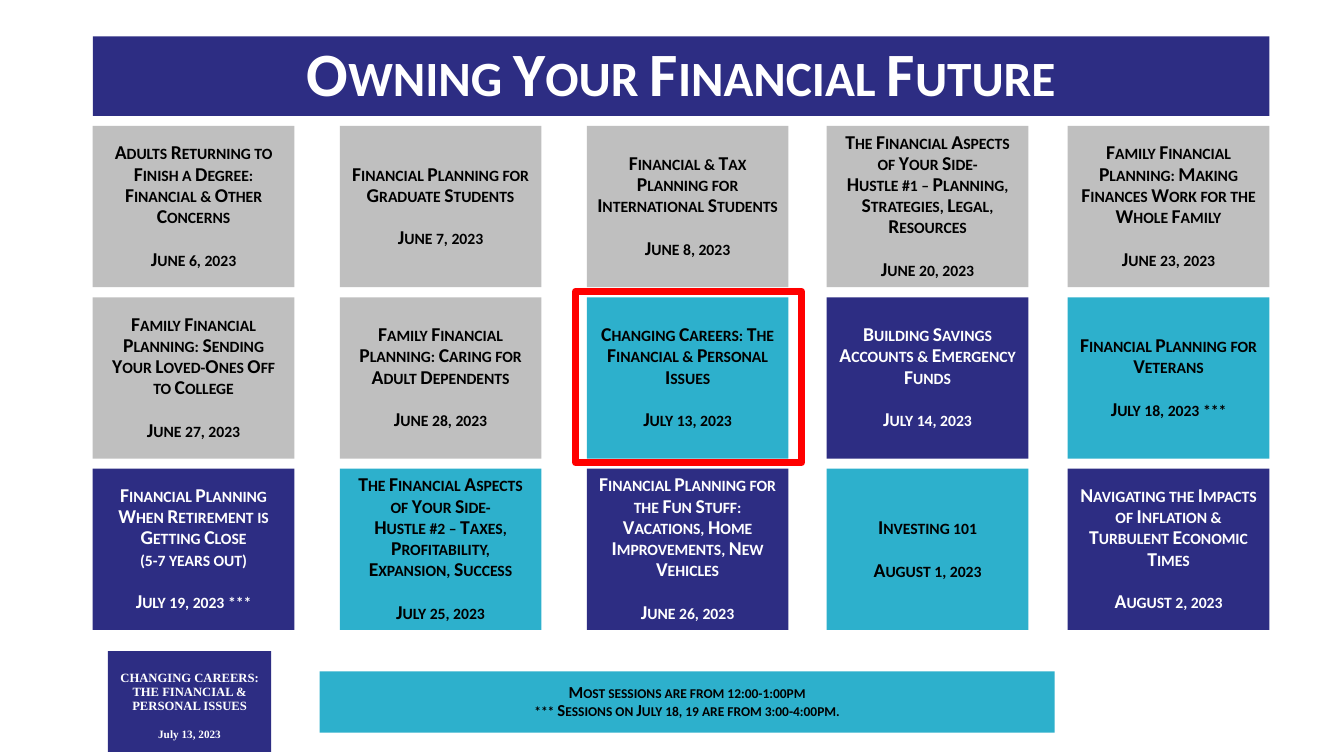
from pptx import Presentation
from pptx.dml.color import RGBColor
from pptx.enum import shapes, text
from pptx.util import Inches, Pt

NAVY = RGBColor(0x2D, 0x2D, 0x83)
TEAL = RGBColor(0x2D, 0xB0, 0xCC)
GRAY = RGBColor(0xBF, 0xBF, 0xBF)
RED = RGBColor(0xFF, 0x00, 0x00)
WHITE = RGBColor(0xFF, 0xFF, 0xFF)
BLACK = RGBColor(0x00, 0x00, 0x00)

COLUMN_LEFTS = [0.92, 3.37, 5.82, 8.2, 10.59]
FIRST_TOP, ROW_PITCH = 1.25, 1.7
CARD_WIDTH, CARD_HEIGHT = 2, 1.6

SESSIONS = [
    [
        ("Adults Returning to Finish a Degree: Financial & Other Concerns", "June 6, 2023", GRAY),
        ("Financial Planning for Graduate Students", "June 7, 2023", GRAY),
        ("Financial & Tax Planning for International Students", "June 8, 2023", GRAY),
        ("The Financial Aspects of Your Side-\vHustle #1 – Planning, Strategies, Legal, Resources",
         "June 20, 2023", GRAY),
        ("Family Financial Planning: Making Finances Work for the Whole Family",
         "June 23, 2023", GRAY),
    ],
    [
        ("Family Financial Planning: Sending Your Loved-Ones Off to College",
         "June 27, 2023", GRAY),
        ("Family Financial Planning: Caring for Adult Dependents", "June 28, 2023", GRAY),
        ("Changing Careers: The Financial & Personal Issues", "July 13, 2023", TEAL),
        ("Building Savings Accounts & Emergency Funds", "July 14, 2023", NAVY),
        ("Financial Planning for Veterans", "July 18, 2023 ***", TEAL),
    ],
    [
        ("Financial Planning When Retirement is Getting Close\v(5-7 years out)",
         "July 19, 2023 ***", NAVY),
        ("The Financial Aspects of Your Side-\vHustle #2 – Taxes, Profitability, Expansion, Success",
         "July 25, 2023", TEAL),
        ("Financial Planning for the Fun Stuff: Vacations, Home Improvements, New Vehicles",
         "June 26, 2023", NAVY),
        ("Investing 101", "August 1, 2023", TEAL),
        ("Navigating the Impacts of Inflation & Turbulent Economic Times",
         "August 2, 2023", NAVY),
    ],
]


def add_box(page, left, top, width, height, fill):
    box = page.shapes.add_shape(shapes.MSO_SHAPE.RECTANGLE, Inches(left), Inches(top),
                                Inches(width), Inches(height))
    box.shadow.inherit = False
    box.line.fill.background()
    paint(box, fill)
    return box


def paint(box, fill):
    box.fill.solid()
    box.fill.fore_color.rgb = fill
    box.text_frame.word_wrap = True
    box.text_frame.vertical_anchor = text.MSO_ANCHOR.MIDDLE


def style(para, size, color, name="Calibri", small_caps=True):
    para.alignment = text.PP_ALIGN.CENTER
    para.line_spacing = 0.9
    font = para.font
    font.name = name
    font.size = Pt(size)
    font.bold = True
    font.color.rgb = color
    if small_caps:
        font._element.set("cap", "small")


def write_pair(box, heading, date, sizes, gap, color, **look):
    frame = box.text_frame
    first, second = frame.paragraphs[0], frame.add_paragraph()
    first.text, second.text = heading, date
    second.space_before = Pt(gap)
    for para, size in zip((first, second), sizes):
        style(para, size, color, **look)


def add_title(page):
    title = page.shapes.title
    title.left, title.top = Inches(0.92), Inches(0.36)
    title.width, title.height = Inches(11.67), Inches(0.79)
    paint(title, NAVY)
    title.text_frame.auto_size = text.MSO_AUTO_SIZE.NONE
    title.text_frame.text = "Owning Your Financial Future"
    style(title.text_frame.paragraphs[0], 44, WHITE)


def add_sessions(page):
    for row, sessions in enumerate(SESSIONS):
        top = FIRST_TOP + row * ROW_PITCH
        for left, (topic, date, fill) in zip(COLUMN_LEFTS, sessions):
            card = add_box(page, left, top, CARD_WIDTH, CARD_HEIGHT, fill)
            color = WHITE if fill == NAVY else BLACK
            write_pair(card, topic, date, (14, 14), 15.4, color)


def add_current_session(page):
    box = add_box(page, 1.07, 6.46, 1.62, 1, NAVY)
    box.text_frame.margin_top = Inches(0.15)
    write_pair(box, "CHANGING CAREERS:\vTHE FINANCIAL & PERSONAL ISSUES", "July 13, 2023",
               (9, 8), 11.5, WHITE, name="Times New Roman", small_caps=False)


def add_time_note(page):
    box = add_box(page, 3.17, 6.66, 7.29, 0.61, TEAL)
    write_pair(box, "Most sessions are from 12:00-1:00pm",
               "*** Sessions on July 18, 19 are from 3:00-4:00pm.", (12, 12), 0, BLACK)


def add_highlight(page):
    frame = add_box(page, 5.71, 2.89, 2.24, 1.7, RED)
    frame.fill.background()
    frame.line.color.rgb = RED
    frame.line.width = Pt(5)


def main():
    deck = Presentation()
    deck.slide_width, deck.slide_height = Inches(13.33), Inches(7.5)
    page = deck.slides.add_slide(deck.slide_layouts.get_by_name("Title Only"))
    add_title(page)
    add_current_session(page)
    add_sessions(page)
    add_time_note(page)
    add_highlight(page)
    deck.save("out.pptx")


if __name__ == "__main__":
    main()
